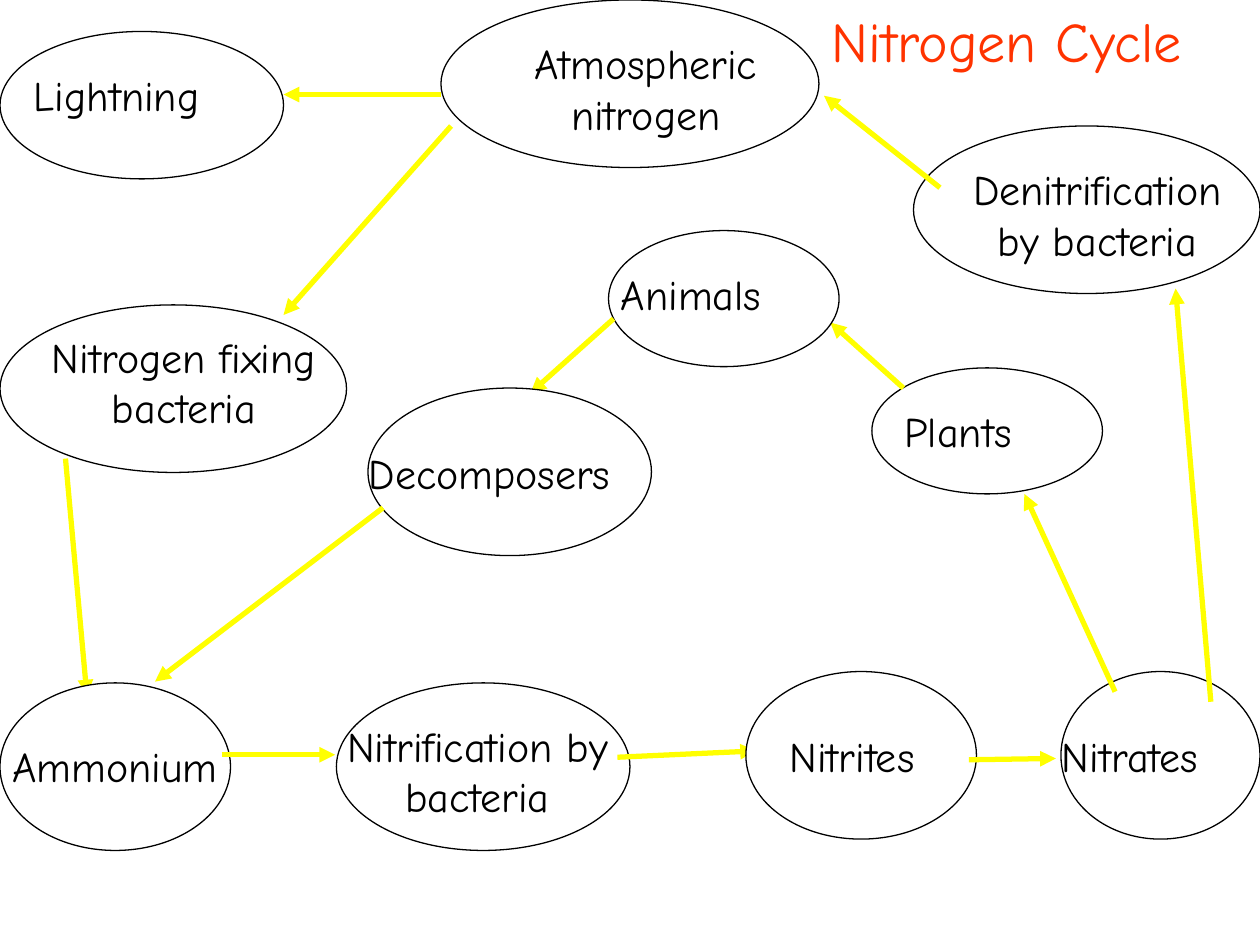
"""Draw the nitrogen cycle as labelled ellipses joined by arrows."""
from dataclasses import dataclass
from typing import Any

from lxml import etree
from pptx import Presentation, util as u
from pptx.dml.color import RGBColor
from pptx.enum import shapes, text
from pptx.oxml.ns import qn

COLOURS = {"paper": "FFFFFF", "ink": "000000", "arrow": "FFFF00", "title": "FF3300"}
FONT = "Comic Neue"
LEFT, CENTRE = text.PP_ALIGN.LEFT, text.PP_ALIGN.CENTER

Box = tuple[float, float, float, float]


@dataclass(frozen=True)
class Stage:
    """A stage of the cycle with the arrows that leave it."""
    label: str
    ellipse: Box
    label_box: Box
    align: Any = LEFT
    arrows: tuple[Box, ...] = ()


STAGES = [
    Stage("Atmospheric nitrogen", (3.5, 0, 3, 1.33), (4, 0.25, 2.25, 0.9), CENTRE,
          ((3.58, 1, 2.25, 2.5), (3.5, 0.75, 2.25, 0.75))),
    Stage("Lightning", (0, 0.25, 2.25, 1.17), (0.17, 0.5, 1.92, 0.5)),
    Stage("Nitrogen fixing bacteria", (0, 2.42, 2.75, 1.33), (0.17, 2.58, 2.58, 0.9), CENTRE,
          ((0.52, 3.64, 0.69, 5.52),)),
    Stage("Ammonium", (0, 5.42, 1.83, 1.33), (0, 5.83, 2.17, 0.5), LEFT,
          ((1.76, 5.99, 2.66, 5.99),)),
    Stage("Nitrification by bacteria", (2.67, 5.42, 2.33, 1.33), (2.5, 5.67, 2.58, 0.9), CENTRE,
          ((4.9, 6.01, 6, 5.96),)),
    Stage("Nitrites", (5.92, 5.33, 1.83, 1.33), (6.17, 5.75, 1.5, 0.5), LEFT,
          ((7.69, 6.03, 8.38, 6.02),)),
    Stage("Nitrates", (8.42, 5.33, 1.58, 1.33), (8.33, 5.75, 1.67, 0.5), LEFT,
          ((8.85, 5.49, 8.13, 3.92), (9.61, 5.57, 9.33, 2.29))),
    Stage("Denitrification by bacteria", (7.25, 1, 2.75, 1.33), (7.42, 1.25, 2.58, 0.9), CENTRE,
          ((7.46, 1.49, 6.54, 0.76),)),
    Stage("Plants", (6.92, 2.92, 1.83, 1), (7.08, 3.17, 1.5, 0.5), LEFT,
          ((7.17, 3.08, 6.59, 2.56),)),
    Stage("Animals", (4.83, 1.83, 1.83, 1.08), (4.83, 2.08, 1.5, 0.5), LEFT,
          ((4.87, 2.53, 4.21, 3.12),)),
    Stage("Decomposers", (2.92, 3.08, 2.25, 1.33), (2.83, 3.5, 2.25, 0.5), LEFT,
          ((3.04, 4.03, 1.23, 5.41),)),
]


def inches(box: Box) -> list[u.Length]:
    return [u.Inches(length) for length in box]


def colour(name: str) -> RGBColor:
    return RGBColor.from_string(COLOURS[name])


def write(holder: Any, words: str, size: int, ink: str, align: Any) -> None:
    frame = holder.text_frame
    frame.text = words
    frame.word_wrap = True
    frame.auto_size = text.MSO_AUTO_SIZE.SHAPE_TO_FIT_TEXT
    frame.vertical_anchor = text.MSO_ANCHOR.TOP
    paragraph = frame.paragraphs[0]
    paragraph.alignment = align
    paragraph.font.name = FONT
    paragraph.font.size = u.Pt(size)
    paragraph.font.color.rgb = colour(ink)


def draw_arrow(slide: Any, ends: Box) -> None:
    arrow = slide.shapes.add_connector(shapes.MSO_CONNECTOR.STRAIGHT, *inches(ends))
    arrow.line.color.rgb = colour("arrow")
    arrow.line.width = u.Pt(3)
    etree.SubElement(arrow.line._get_or_add_ln(), qn("a:tailEnd"), type="triangle")
    etree.SubElement(arrow._element.spPr, qn("a:effectLst"))


def draw_stage(slide: Any, stage: Stage) -> None:
    ellipse = slide.shapes.add_shape(shapes.MSO_SHAPE.OVAL, *inches(stage.ellipse))
    ellipse.shadow.inherit = False
    ellipse.fill.solid()
    ellipse.fill.fore_color.rgb = colour("paper")
    ellipse.line.color.rgb = colour("ink")
    ellipse.line.width = u.Pt(0.75)
    label = slide.shapes.add_textbox(*inches(stage.label_box))
    write(label, stage.label, 24, "ink", stage.align)
    for ends in stage.arrows:
        draw_arrow(slide, ends)


def main() -> None:
    deck = Presentation()
    deck.slide_width, deck.slide_height = u.Inches(10), u.Inches(7.5)
    slide = deck.slides.add_slide(deck.slide_layouts.get_by_name("Title Only"))
    title = slide.shapes.title
    title.left, title.top, title.width, title.height = inches((6.5, 0, 3.5, 0.63))
    write(title, "Nitrogen Cycle", 32, "title", LEFT)
    for stage in STAGES:
        draw_stage(slide, stage)
    deck.save("out.pptx")


if __name__ == "__main__":
    main()
